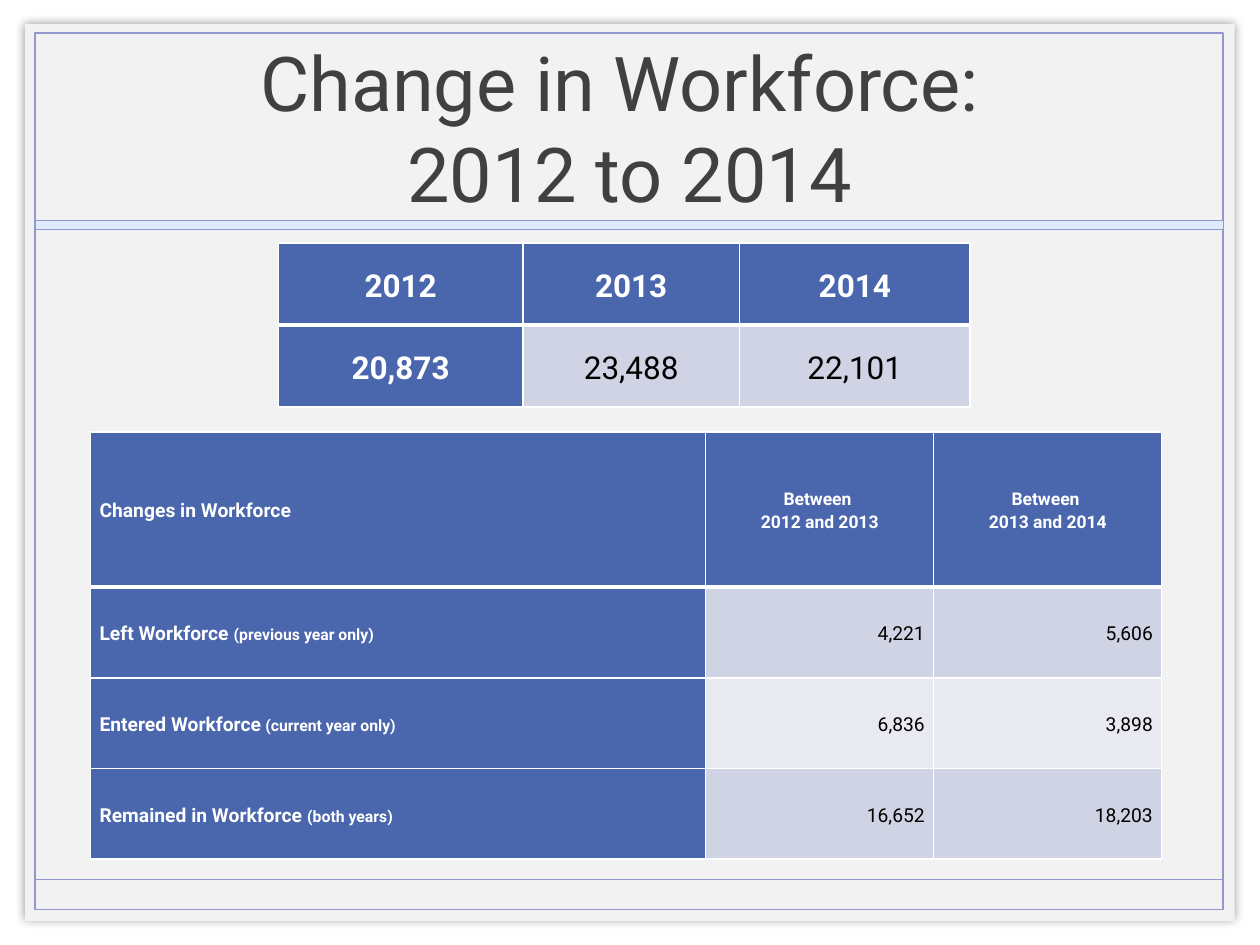
from dataclasses import dataclass

import pptx
import pptx.dml.color
import pptx.enum.shapes
import pptx.enum.text
import pptx.oxml
import pptx.oxml.ns
import pptx.util
from pptx.util import Inches

Align = pptx.enum.text.PP_ALIGN
Anchor = pptx.enum.text.MSO_ANCHOR
Shape = pptx.enum.shapes.MSO_SHAPE


@dataclass(frozen=True)
class Theme:
    font: str = "Roboto"
    panel: str = "F2F2F2"
    rule: str = "9297CF"
    strip: str = "DEEAFD"
    title: str = "404040"
    head: str = "4A66AC"
    dark: str = "D0D3E3"
    pale: str = "E9EAF1"
    white: str = "FFFFFF"
    black: str = "000000"
    title_size: float = 43.2
    year_size: float = 18
    label_size: float = 11
    span_size: float = 10
    note_size: float = 9


THEME = Theme()


@dataclass(frozen=True)
class Box:
    left: float
    top: float
    width: float
    height: float
    fill: str | None = None
    line: str | None = None
    weight: float = 1


@dataclass(frozen=True)
class Cell:
    text: str
    size: float
    align: Align = Align.CENTER
    fill: str = THEME.head
    note: str = ""


@dataclass(frozen=True)
class Grid:
    left: float
    top: float
    cols: list[float]
    rows: list[float]
    cells: list[list[Cell]]


PANEL = Box(0.2, 0.19, 9.6, 7.12, fill=THEME.panel)
FRAME = Box(0.28, 0.26, 9.43, 6.96, line=THEME.rule)
STRIP = Box(0.28, 1.75, 9.43, 0.07, THEME.strip, THEME.rule, 0.25)
FOOT_Y = 6.98


def color(code: str) -> pptx.dml.color.RGBColor:
    return pptx.dml.color.RGBColor.from_string(code)


def parse_xml(tag: str, body: str = "", attrs: str = ""):
    space = pptx.oxml.ns.nsdecls("a")
    return pptx.oxml.parse_xml(f"<a:{tag} {space} {attrs}>{body}</a:{tag}>")


def draw_box(slide, box: Box):
    shape = slide.shapes.add_shape(
        Shape.RECTANGLE, Inches(box.left), Inches(box.top),
        Inches(box.width), Inches(box.height))
    shape.shadow.inherit = False
    if box.fill:
        shape.fill.solid()
        shape.fill.fore_color.rgb = color(box.fill)
    else:
        shape.fill.background()
    if box.line:
        shape.line.color.rgb = color(box.line)
        shape.line.width = pptx.util.Pt(box.weight)
    else:
        shape.line.fill.background()
    return shape


def add_glow(shape) -> None:
    """Give the shape a soft, centred shadow."""
    effects = shape.element.spPr.find(pptx.oxml.ns.qn("a:effectLst"))
    tint = f'<a:srgbClr val="{THEME.black}"><a:alpha val="40000"/></a:srgbClr>'
    effects.append(parse_xml(
        "outerShdw", tint,
        f'blurRad="{pptx.util.Pt(5)}" dist="0" dir="0" algn="ctr" rotWithShape="0"'))


def draw_rule(slide) -> None:
    line = slide.shapes.add_connector(
        pptx.enum.shapes.MSO_CONNECTOR.STRAIGHT, Inches(FRAME.left), Inches(FOOT_Y),
        Inches(FRAME.left + FRAME.width), Inches(FOOT_Y))
    line.line.color.rgb = color(THEME.rule)
    line.line.width = pptx.util.Pt(1)
    line.element.spPr.append(parse_xml("effectLst"))


def draw_title(slide) -> None:
    title = slide.shapes.title
    title.left, title.top = Inches(0.98), Inches(0.27)
    title.width, title.height = Inches(8.03), Inches(1.47)
    frame = title.text_frame
    frame.text = "Change in Workforce: \v2012 to 2014"
    frame.auto_size = pptx.enum.text.MSO_AUTO_SIZE.NONE
    frame.vertical_anchor = Anchor.MIDDLE
    para = frame.paragraphs[0]
    para.alignment = Align.CENTER
    style_font(para.font, THEME.title_size, THEME.title, False)
    slide.shapes.element.append(title.element)  # bring in front of the panel


def style_font(font, size: float, code: str, bold: bool) -> None:
    font.name = THEME.font
    font.size = pptx.util.Pt(size)
    font.bold = bold
    font.color.rgb = color(code)


def fill_cell(target, cell: Cell, is_head: bool) -> None:
    target.margin_left = target.margin_right = Inches(0.07)
    target.margin_top = target.margin_bottom = 0
    target.vertical_anchor = Anchor.MIDDLE
    frame = target.text_frame
    frame.text = cell.text
    para = frame.paragraphs[0]
    para.alignment = cell.align
    para.line_spacing = 1.15
    if cell.note:
        para.add_run().text = cell.note
    bold = cell.fill == THEME.head
    ink = THEME.white if bold else THEME.black
    for run in para.runs:
        size = THEME.note_size if run.text == cell.note else cell.size
        style_font(run.font, size, ink, bold)
    props = target._tc.get_or_add_tcPr()
    paint = f'<a:solidFill><a:srgbClr val="{THEME.white}"/></a:solidFill>'
    for side in "LRTB":
        weight = 3 if is_head and side == "B" else 1
        props.append(parse_xml(f"ln{side}", paint, f'w="{pptx.util.Pt(weight)}"'))
    target.fill.solid()
    target.fill.fore_color.rgb = color(cell.fill)


def draw_grid(slide, grid: Grid) -> None:
    table = slide.shapes.add_table(
        len(grid.rows), len(grid.cols), Inches(grid.left), Inches(grid.top),
        Inches(sum(grid.cols)), Inches(sum(grid.rows))).table
    table.first_col = True
    for col, width in zip(table.columns, grid.cols):
        col.width = Inches(width)
    for row, height, cells in zip(table.rows, grid.rows, grid.cells):
        row.height = Inches(height)
        for target, cell in zip(row.cells, cells):
            fill_cell(target, cell, cells is grid.cells[0])


def change_row(label: str, note: str, counts: list[str], fill: str) -> list[Cell]:
    size = THEME.label_size
    return [Cell(label, size, Align.LEFT, note=note),
            *(Cell(count, size, Align.RIGHT, fill) for count in counts)]


YEARS = Grid(2.21, 1.93, [1.94, 1.72, 1.83], [0.65] * 2, [
    [Cell(year, THEME.year_size) for year in ("2012", "2013", "2014")],
    [Cell("20,873", THEME.year_size),
     *(Cell(count, THEME.year_size, fill=THEME.dark) for count in ("23,488", "22,101"))],
])
CHANGES = Grid(0.72, 3.43, [4.88, 1.81, 1.81], [1.23] + [0.72] * 3, [
    [Cell("Changes in Workforce", THEME.label_size, Align.LEFT),
     *(Cell(f"Between \v{span}", THEME.span_size)
       for span in ("2012 and 2013", "2013 and 2014"))],
    change_row("Left Workforce ", "(previous year only)", ["4,221", "5,606"], THEME.dark),
    change_row("Entered Workforce", " (current year only)", ["6,836", "3,898"], THEME.pale),
    change_row("Remained in Workforce ", "(both years)", ["16,652", "18,203"], THEME.dark),
])


def main() -> None:
    deck = pptx.Presentation()
    deck.slide_width, deck.slide_height = Inches(10), Inches(7.5)
    slide = deck.slides.add_slide(deck.slide_layouts[5])
    slide.background.fill.solid()
    slide.background.fill.fore_color.rgb = color(THEME.white)
    add_glow(draw_box(slide, PANEL))
    draw_box(slide, FRAME)
    draw_rule(slide)
    draw_box(slide, STRIP)
    draw_title(slide)
    for grid in (YEARS, CHANGES):
        draw_grid(slide, grid)
    deck.save("out.pptx")


if __name__ == "__main__":
    main()
